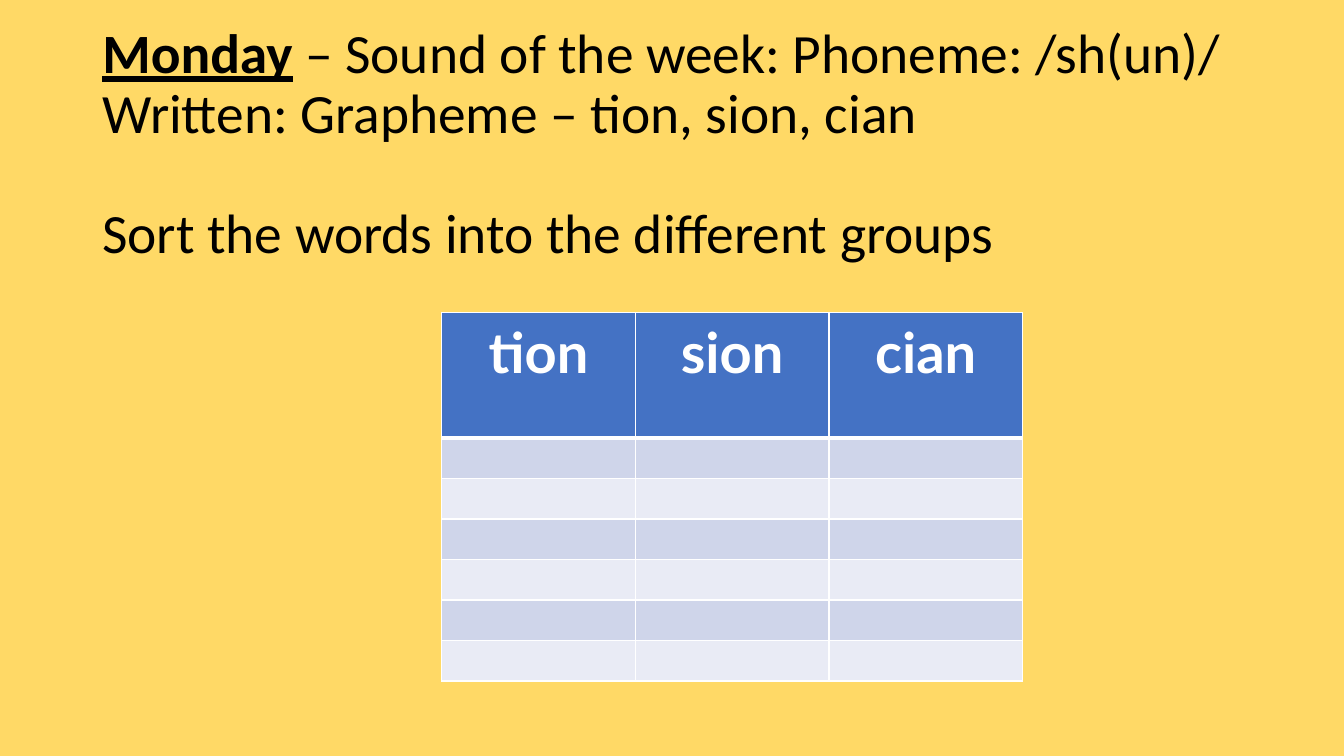
from lxml import etree
from pptx import Presentation
from pptx.dml.color import RGBColor
from pptx.enum.text import MSO_ANCHOR, PP_ALIGN
from pptx.oxml.ns import qn
from pptx.util import Cm, Pt

MIDDLE = MSO_ANCHOR.MIDDLE
CENTER = PP_ALIGN.CENTER

YELLOW = RGBColor(0xFF, 0xD9, 0x66)
BLACK = RGBColor(0x00, 0x00, 0x00)
WHITE = RGBColor(0xFF, 0xFF, 0xFF)
BLUE = RGBColor(0x44, 0x72, 0xC4)
DARK_BAND = RGBColor(0xCF, 0xD5, 0xEA)
LIGHT_BAND = RGBColor(0xE9, 0xEB, 0xF5)

TITLE_LINES = [
    ["Monday", " – Sound of the week: Phoneme: /sh(un)/"],
    ["Written: Grapheme – tion, sion, cian"],
    ["Sort the words into the different groups"],
]
GRAPHEMES = ["tion", "sion", "cian"]
WORD_ROWS = 6


def style_run(run, font_name, size, color, bold=False, underline=False):
    run.font.name = font_name
    run.font.size = Pt(size)
    run.font.color.rgb = color
    run.font.bold = bold
    run.font.underline = underline


def add_title(slide):
    box = slide.shapes.add_textbox(Cm(2.33), Cm(1.83), Cm(29.21), Cm(3.68))
    text_frame = box.text_frame
    text_frame.word_wrap = True
    text_frame.vertical_anchor = MIDDLE
    for index, parts in enumerate(TITLE_LINES):
        paragraph = text_frame.add_paragraph() if index else text_frame.paragraphs[0]
        paragraph.line_spacing = 0.9
        for part in parts:
            run = paragraph.add_run()
            run.text = part
            is_day = part == "Monday"
            style_run(run, "Calibri", 39.6, BLACK, is_day, is_day)
    text_frame.paragraphs[-1].space_before = Pt(43)


def set_borders(cell, top, bottom):
    properties = cell._tc.get_or_add_tcPr()
    for side, width in (("L", 1), ("R", 1), ("T", top), ("B", bottom)):
        line = etree.SubElement(properties, qn(f"a:ln{side}"), w=str(Pt(width)))
        fill = etree.SubElement(line, qn("a:solidFill"))
        etree.SubElement(fill, qn("a:srgbClr"), val=str(WHITE))


def fill_cell(cell, color):
    cell.fill.solid()
    cell.fill.fore_color.rgb = color


def add_sorting_table(slide):
    header_height, row_height, column_width = Cm(3.16), Cm(1.02), Cm(4.88)
    frame = slide.shapes.add_table(
        WORD_ROWS + 1, len(GRAPHEMES), Cm(11.13), Cm(7.88),
        column_width * len(GRAPHEMES), header_height + row_height * WORD_ROWS)
    table = frame.table
    for column in table.columns:
        column.width = column_width
    for index, row in enumerate(table.rows):
        row.height = row_height if index else header_height
        band = DARK_BAND if index % 2 else LIGHT_BAND
        for cell in row.cells:
            set_borders(cell, 3 if index == 1 else 1, 1 if index else 3)
            fill_cell(cell, band if index else BLUE)
    for cell, grapheme in zip(table.rows[0].cells, GRAPHEMES):
        cell.text_frame.text = grapheme
        paragraph = cell.text_frame.paragraphs[0]
        paragraph.alignment = CENTER
        style_run(paragraph.runs[0], "Lato", 40, WHITE, bold=True)


def main():
    presentation = Presentation()
    presentation.slide_width = Cm(33.87)
    presentation.slide_height = Cm(19.05)
    slide = presentation.slides.add_slide(presentation.slide_layouts[6])
    slide.background.fill.solid()
    slide.background.fill.fore_color.rgb = YELLOW
    add_title(slide)
    add_sorting_table(slide)
    presentation.save("out.pptx")


if __name__ == "__main__":
    main()
